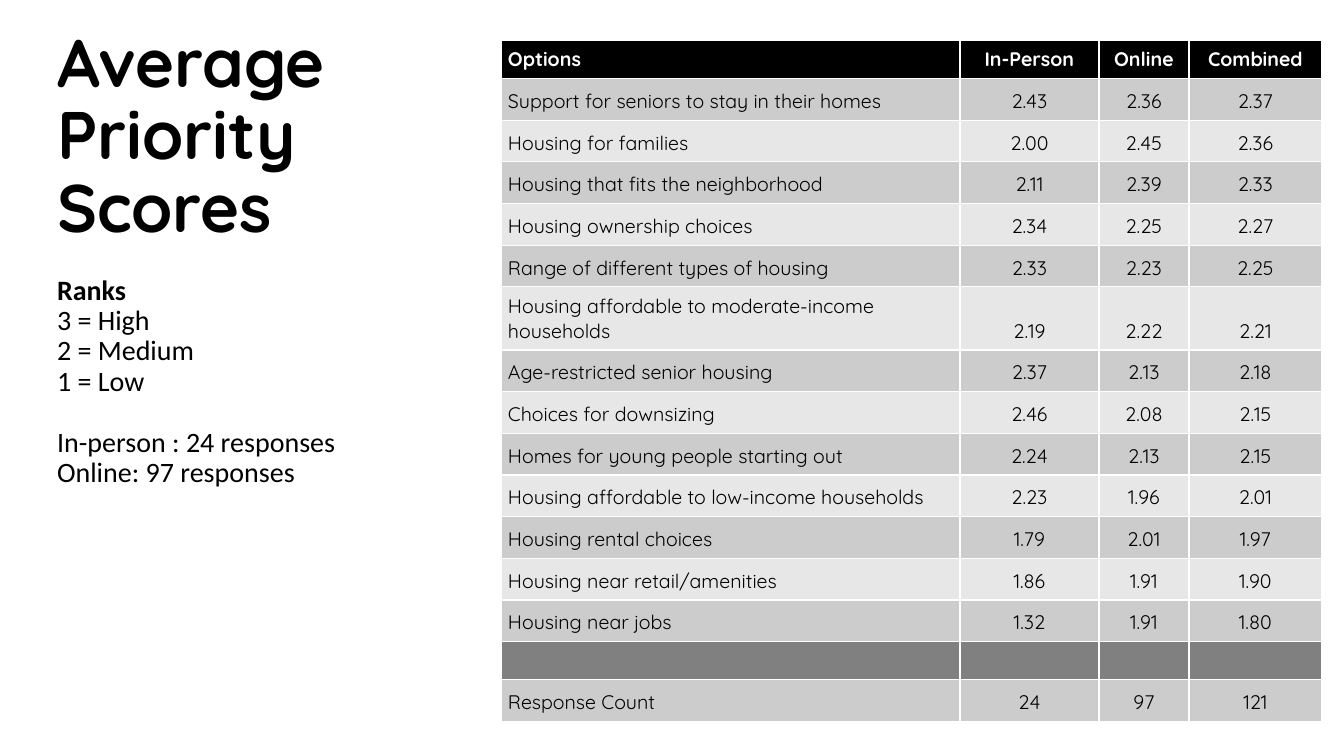
from pptx import Presentation
from pptx.dml.color import RGBColor
from pptx.enum.text import MSO_ANCHOR, MSO_AUTO_SIZE, PP_ALIGN
from pptx.util import Pt

TITLE = "Average Priority Scores"
NOTES = [
    ("Ranks", 21),
    ("3 = High", 0),
    ("2 = Medium", 0),
    ("1 = Low", 0),
    ("In-person : 24 responses", 22),
    ("Online: 97 responses", 0),
]
WRAPPED = "Housing affordable to moderate-income households"
SPACER = ("", "", "", "")
ROWS = [
    ("Options", "In-Person", "Online", "Combined"),
    ("Support for seniors to stay in their homes", "2.43", "2.36", "2.37"),
    ("Housing for families", "2.00", "2.45", "2.36"),
    ("Housing that fits the neighborhood", "2.11", "2.39", "2.33"),
    ("Housing ownership choices", "2.34", "2.25", "2.27"),
    ("Range of different types of housing", "2.33", "2.23", "2.25"),
    (WRAPPED, "2.19", "2.22", "2.21"),
    ("Age-restricted senior housing", "2.37", "2.13", "2.18"),
    ("Choices for downsizing", "2.46", "2.08", "2.15"),
    ("Homes for young people starting out", "2.24", "2.13", "2.15"),
    ("Housing affordable to low-income households", "2.23", "1.96", "2.01"),
    ("Housing rental choices", "1.79", "2.01", "1.97"),
    ("Housing near retail/amenities", "1.86", "1.91", "1.90"),
    ("Housing near jobs", "1.32", "1.91", "1.80"),
    SPACER,
    ("Response Count", "24", "97", "121"),
]
COLUMNS = [459, 139, 90, 133]
TABLE_LEFT, TABLE_TOP, TABLE_HEIGHT = 501, 40, 680
SHORT_ROW, WRAPPED_ROW = 38, 62
PADDING, SPACER_PADDING = 7, 3

BLACK = RGBColor(0x00, 0x00, 0x00)
WHITE = RGBColor(0xFF, 0xFF, 0xFF)
DARK_BAND = RGBColor(0xCC, 0xCC, 0xCC)
LIGHT_BAND = RGBColor(0xE7, 0xE7, 0xE7)
GRAY = RGBColor(0x80, 0x80, 0x80)

LEFT, CENTER = PP_ALIGN.LEFT, PP_ALIGN.CENTER
TOP, BOTTOM = MSO_ANCHOR.TOP, MSO_ANCHOR.BOTTOM
NO_AUTOFIT = MSO_AUTO_SIZE.NONE


def px(n):
    return round(n * 914400 / 100.8)


def style(p, font, size, color, bold, align):
    p.alignment = align
    for r in p.runs:
        r.font.name = font
        r.font.size = Pt(size)
        r.font.bold = bold
        r.font.color.rgb = color


def add_title(slide):
    sp = slide.shapes.title
    sp.left, sp.top, sp.width, sp.height = px(47), px(24), px(371), px(549)
    tf = sp.text_frame
    tf.word_wrap = True
    tf.auto_size = NO_AUTOFIT
    tf.vertical_anchor = TOP
    tf.text = TITLE
    p = tf.paragraphs[0]
    p.line_spacing = 0.9
    style(p, "Quicksand", 48, BLACK, True, LEFT)
    for i, (text, gap) in enumerate(NOTES):
        p = tf.add_paragraph()
        p.text = text
        p.line_spacing = 0.9
        p.space_before = Pt(gap)
        style(p, "Calibri", 20, BLACK, i == 0, LEFT)


def row_fill(i, row):
    if i == 0:
        return BLACK
    if row == SPACER:
        return GRAY
    return DARK_BAND if i % 2 else LIGHT_BAND


def add_scores(slide):
    fixed = {ROWS[0]: SHORT_ROW, SPACER: SHORT_ROW}
    fixed.update({row: WRAPPED_ROW for row in ROWS if row[0] == WRAPPED})
    regular = (TABLE_HEIGHT - sum(fixed.values())) / (len(ROWS) - len(fixed))
    table = slide.shapes.add_table(
        len(ROWS), len(COLUMNS), px(TABLE_LEFT), px(TABLE_TOP),
        px(sum(COLUMNS)), px(TABLE_HEIGHT)).table
    for column, width in zip(table.columns, COLUMNS):
        column.width = px(width)
    for i, row in enumerate(ROWS):
        table.rows[i].height = px(fixed.get(row, regular))
        pad = px(SPACER_PADDING if row == SPACER else PADDING)
        for j, text in enumerate(row):
            cell = table.cell(i, j)
            cell.fill.solid()
            cell.fill.fore_color.rgb = row_fill(i, row)
            cell.margin_left = cell.margin_right = px(PADDING)
            cell.margin_top = cell.margin_bottom = pad
            cell.vertical_anchor = BOTTOM
            cell.text = text
            style(cell.text_frame.paragraphs[0], "Quicksand", 14,
                  BLACK if i else WHITE, i == 0, CENTER if j else LEFT)


def main():
    prs = Presentation()
    prs.slide_width, prs.slide_height = px(1344), px(756)
    slide = prs.slides.add_slide(prs.slide_layouts[5])
    add_title(slide)
    add_scores(slide)
    prs.save("out.pptx")


if __name__ == "__main__":
    main()
